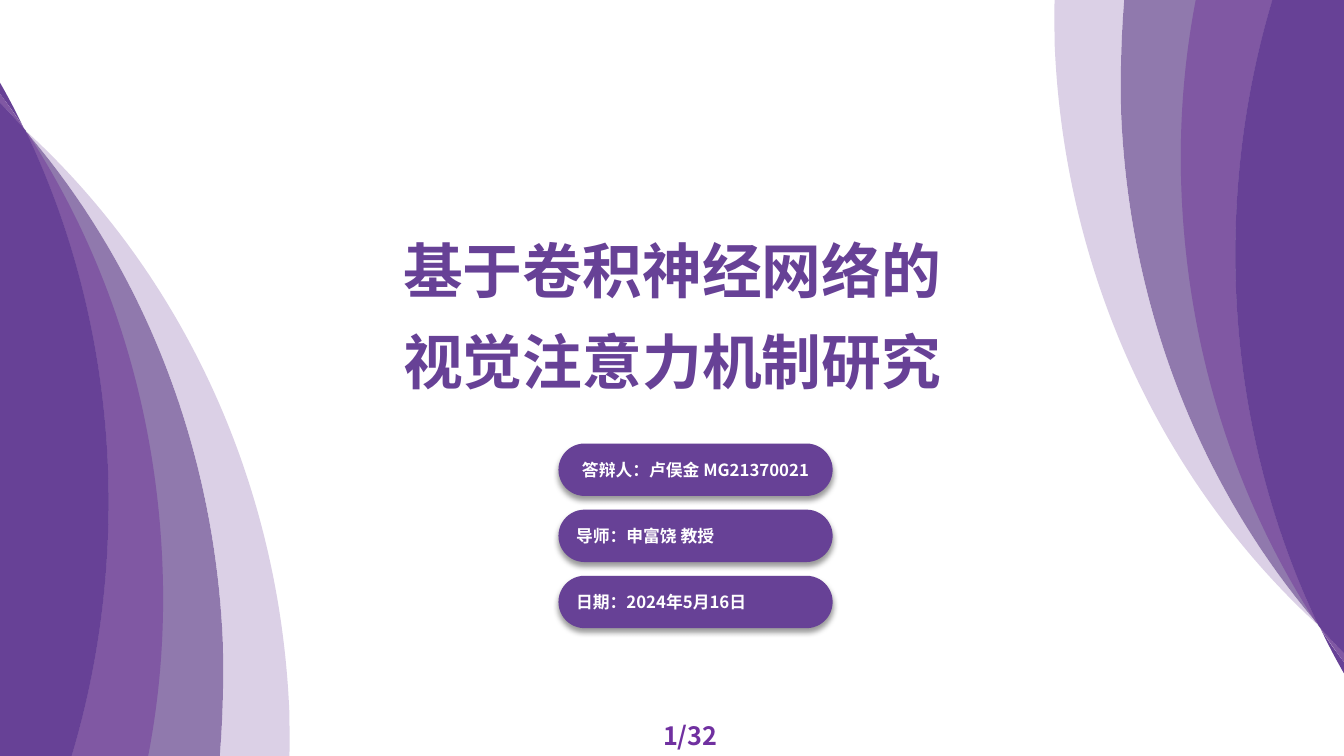
from lxml import etree
from pptx import Presentation
from pptx.dml.color import RGBColor
from pptx.enum.shapes import MSO_SHAPE
from pptx.enum.text import MSO_ANCHOR, MSO_AUTO_SIZE, PP_ALIGN
from pptx.oxml import parse_xml
from pptx.oxml.ns import nsdecls, qn
from pptx.util import Inches, Pt

WIDTH, HEIGHT = 13.333, 7.5
FONT = "Noto Sans CJK SC"
COLORS = {
    "purple": "674196",
    "violet": "8058A3",
    "mauve": "9079AD",
    "lilac": "DBD0E6",
    "silver": "DDE3E5",
    "gray": "D0D6D8",
    "white": "FFFFFF",
    "number": "7030A0",
}


def add_wave(color, start, segments, turned):
    points = [start]
    for segment in segments:
        points.extend(zip(segment[::2], segment[1::2]))
    if turned:
        points = [(WIDTH - x, HEIGHT - y) for x, y in points]
    points = [(Inches(x), Inches(y)) for x, y in points]
    builder = slide.shapes.build_freeform(*points[0], scale=1.0)
    builder.add_line_segments(points[1:], close=True)
    wave = builder.convert_to_shape()
    lines = iter(list(wave._element.iter(qn("a:lnTo"))))
    for segment in segments:
        line = next(lines)
        if len(segment) == 6:
            line.tag_name = None
            curve = etree.Element(qn("a:cubicBezTo"))
            line.addprevious(curve)
            for corner in (line, next(lines), next(lines)):
                curve.append(corner[0])
                corner.getparent().remove(corner)
    wave.shadow.inherit = False
    wave.fill.solid()
    wave.fill.fore_color.rgb = RGBColor.from_string(COLORS[color])
    wave.line.fill.background()


def style(paragraph, size, color, alignment):
    paragraph.alignment = alignment
    font = paragraph.font
    font.size = Pt(size)
    font.bold = True
    font.color.rgb = RGBColor.from_string(COLORS[color])
    font.name = FONT
    properties = paragraph._p.pPr.find(qn("a:defRPr"))
    etree.SubElement(properties, qn("a:ea")).set("typeface", FONT)


presentation = Presentation()
presentation.slide_width = Inches(WIDTH)
presentation.slide_height = Inches(HEIGHT)
slide = presentation.slides.add_slide(presentation.slide_layouts[5])
slide.background.fill.solid()
slide.background.fill.fore_color.rgb = RGBColor.from_string(COLORS["white"])

waves = [
    ("lilac", (0, 1.08), [(0, 7.5), (2.87, 7.5),
                          (2.88, 7.35, 2.87, 7.2, 2.87, 7.05),
                          (2.77, 4.74, 1.78, 2.7, 0.27, 1.31), (0.28, 1.33),
                          (1.41, 2.66, 2.13, 4.42, 2.21, 6.37),
                          (2.22, 6.75, 2.21, 7.13, 2.18, 7.5), (0, 7.5)]),
    ("mauve", (2.18, 7.5), [(2.21, 7.13, 2.22, 6.75, 2.21, 6.37),
                            (2.12, 4.26, 1.29, 2.38, 0, 1.02), (0, 7.5)]),
    ("silver", (0.23, 1.26), [(0.25, 1.29), (0.25, 1.3), (0.27, 1.31)]),
    ("gray", (0.25, 1.3), [(0.28, 1.33), (0.27, 1.31)]),
    ("violet", (0, 1.02), [(0, 7.5), (1.47, 7.5),
                           (1.59, 6.88, 1.64, 6.23, 1.61, 5.56),
                           (1.54, 3.98, 1.06, 2.53, 0.28, 1.33),
                           (0.25, 1.3), (0.25, 1.29),
                           (0.73, 2.29, 1.02, 3.42, 1.07, 4.62),
                           (1.11, 5.63, 0.98, 6.6, 0.71, 7.5), (0, 7.5)]),
    ("purple", (0, 0.82), [(0, 0.93), (0.08, 1.04, 0.16, 1.14, 0.23, 1.26),
                           (0.16, 1.11, 0.08, 0.96, 0, 0.82)]),
    ("violet", (0, 0.93), [(0, 1.02), (0.09, 1.11, 0.17, 1.2, 0.25, 1.3),
                           (0.23, 1.26), (0.16, 1.15, 0.08, 1.04, 0, 0.93)]),
    ("purple", (0, 1.02), [(0, 7.5), (0.71, 7.5),
                           (0.98, 6.6, 1.11, 5.63, 1.07, 4.62),
                           (1.02, 3.42, 0.73, 2.29, 0.25, 1.29),
                           (0.17, 1.2, 0.09, 1.11, 0, 1.02)]),
]
for turned in (False, True):
    for color, start, segments in waves:
        add_wave(color, start, segments, turned)

title = slide.shapes.title
title.left, title.top = Inches(3.77), Inches(2.08)
title.width, title.height = Inches(5.8), Inches(1.84)
title_frame = title.text_frame
title_frame.text = "基于卷积神经网络的\n视觉注意力机制研究"
title_frame.word_wrap = True
title_frame.auto_size = MSO_AUTO_SIZE.NONE
title_frame.vertical_anchor = MSO_ANCHOR.TOP
for paragraph in title_frame.paragraphs:
    paragraph.line_spacing = Pt(65)
    style(paragraph, 42.7, "purple", PP_ALIGN.CENTER)

details = [
    ("答辩人：卢俣金 MG21370021", PP_ALIGN.CENTER),
    ("导师：申富饶 教授", PP_ALIGN.LEFT),
    ("日期：2024年5月16日", PP_ALIGN.LEFT),
]
for index, (text, alignment) in enumerate(details):
    pill = slide.shapes.add_shape(
        MSO_SHAPE.ROUNDED_RECTANGLE,
        Inches(5.54), Inches(4.4 + 0.656 * index), Inches(2.72), Inches(0.52))
    pill.adjustments[0] = 0.5
    pill.fill.solid()
    pill.fill.fore_color.rgb = RGBColor.from_string(COLORS["purple"])
    pill.line.fill.background()
    pill._element.spPr.append(parse_xml(
        f'<a:effectLst {nsdecls("a")}>'
        f'<a:outerShdw blurRad="{Pt(4)}" dist="{Pt(3)}" dir="5400000" algn="t" rotWithShape="0">'
        '<a:srgbClr val="000000"><a:alpha val="40000"/></a:srgbClr>'
        '</a:outerShdw></a:effectLst>'))
    pill.text_frame.text = text
    pill.text_frame.vertical_anchor = MSO_ANCHOR.MIDDLE
    style(pill.text_frame.paragraphs[0], 12, "white", alignment)

page_number = slide.shapes.add_textbox(
    Inches(6.48), Inches(7.1), Inches(0.84), Inches(0.4))
page_number.text_frame.word_wrap = True
page_number.text_frame.text = "1/32"
style(page_number.text_frame.paragraphs[0], 18, "number", PP_ALIGN.LEFT)

presentation.save("out.pptx")
